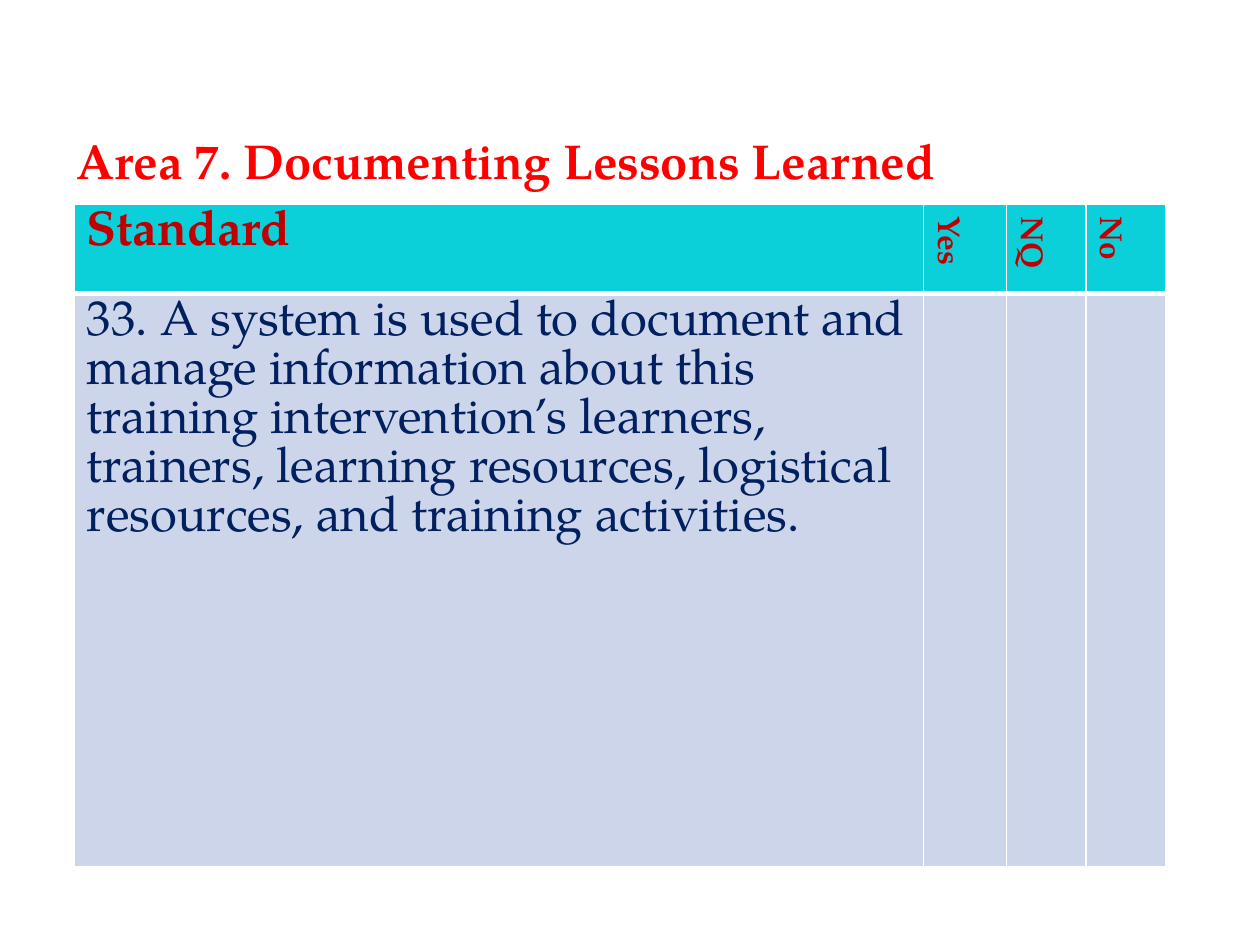
import pptx
import pptx.dml.color
import pptx.enum.text
import pptx.oxml
import pptx.oxml.ns
import pptx.util
from pptx.util import Inches

RGBColor = pptx.dml.color.RGBColor
RED = RGBColor(0xFF, 0x00, 0x00)
DARK_RED = RGBColor(0xC0, 0x00, 0x00)
NAVY = RGBColor(0x00, 0x20, 0x60)
TURQUOISE = RGBColor(0x0B, 0xD0, 0xD9)
PALE_BLUE = RGBColor(0xCC, 0xD5, 0xEA)
WHITE = RGBColor(0xFF, 0xFF, 0xFF)

FONT = "TeX Gyre Pagella"
TITLE_FORMAT = {"name": FONT, "size": pptx.util.Pt(28), "bold": True}
ANSWER_FORMAT = {**TITLE_FORMAT, "size": pptx.util.Pt(18)}
BODY_FORMAT = {**TITLE_FORMAT, "bold": False}

HEADERS = ["Standard", "Yes", "NQ", "No"]
STANDARD = (
    "33. A system is used to document and manage information about this "
    "training intervention’s learners, trainers, learning resources, "
    "logistical resources, and training activities."
)
COLUMN_WIDTHS = [6.74, 0.66, 0.63, 0.63]
ROW_HEIGHTS = [0.71, 4.55]


def write_text(paragraph, text, font_format, color):
    run = paragraph.add_run()
    run.text = text
    for name, value in font_format.items():
        setattr(run.font, name, value)
    run.font.color.rgb = color


def set_borders(cell, widths):
    """Draw white cell borders; widths maps each side to points."""
    properties = cell._tc.get_or_add_tcPr()
    for position, (side, width) in enumerate(widths.items()):
        line = pptx.oxml.parse_xml(
            f'<a:ln{side} {pptx.oxml.ns.nsdecls("a")} w="{pptx.util.Pt(width)}">'
            f'<a:solidFill><a:srgbClr val="{WHITE}"/></a:solidFill></a:ln{side}>'
        )
        properties.insert(position, line)


def add_title(slide, left, top, width, height):
    shape = slide.shapes.add_textbox(left, top, width, height)
    shape.text_frame.word_wrap = True
    paragraph = shape.text_frame.paragraphs[0]
    paragraph.space_before = pptx.util.Pt(8)
    write_text(paragraph, "Area 7. Documenting Lessons Learned", TITLE_FORMAT, RED)


def add_checklist(slide, left, top, width, height):
    shape = slide.shapes.add_table(
        len(ROW_HEIGHTS), len(COLUMN_WIDTHS), left, top, width, height
    )
    table = shape.table
    for column, share in zip(table.columns, COLUMN_WIDTHS):
        column.width = int(width * share / sum(COLUMN_WIDTHS))
    for row, share in zip(table.rows, ROW_HEIGHTS):
        row.height = int(height * share / sum(ROW_HEIGHTS))

    # Fills and borders, with a heavier rule under the header
    for row_index, fill in enumerate([TURQUOISE, PALE_BLUE]):
        for cell in table.rows[row_index].cells:
            cell.fill.solid()
            cell.fill.fore_color.rgb = fill
            is_header = row_index == 0
            set_borders(cell, {"L": 1, "R": 1, "T": 1 if is_header else 3,
                               "B": 3 if is_header else 1})

    # Header labels: the answer columns read downwards
    for index, label in enumerate(HEADERS):
        cell = table.cell(0, index)
        font_format = ANSWER_FORMAT if index else TITLE_FORMAT
        write_text(cell.text_frame.paragraphs[0], label, font_format, DARK_RED)
        if index:
            cell._tc.get_or_add_tcPr().set("vert", "vert")

    # Standard to be rated
    paragraph = table.cell(1, 0).text_frame.paragraphs[0]
    write_text(paragraph, STANDARD, BODY_FORMAT, NAVY)


def main():
    presentation = pptx.Presentation()
    presentation.slide_width = Inches(10)
    presentation.slide_height = Inches(7.5)
    slide = presentation.slides.add_slide(presentation.slide_layouts[6])
    add_checklist(slide, Inches(0.59), Inches(1.62), Inches(8.66), Inches(5.26))
    add_title(slide, Inches(0.51), Inches(0.99), Inches(9.21), Inches(0.57))
    presentation.save("out.pptx")


if __name__ == "__main__":
    main()
